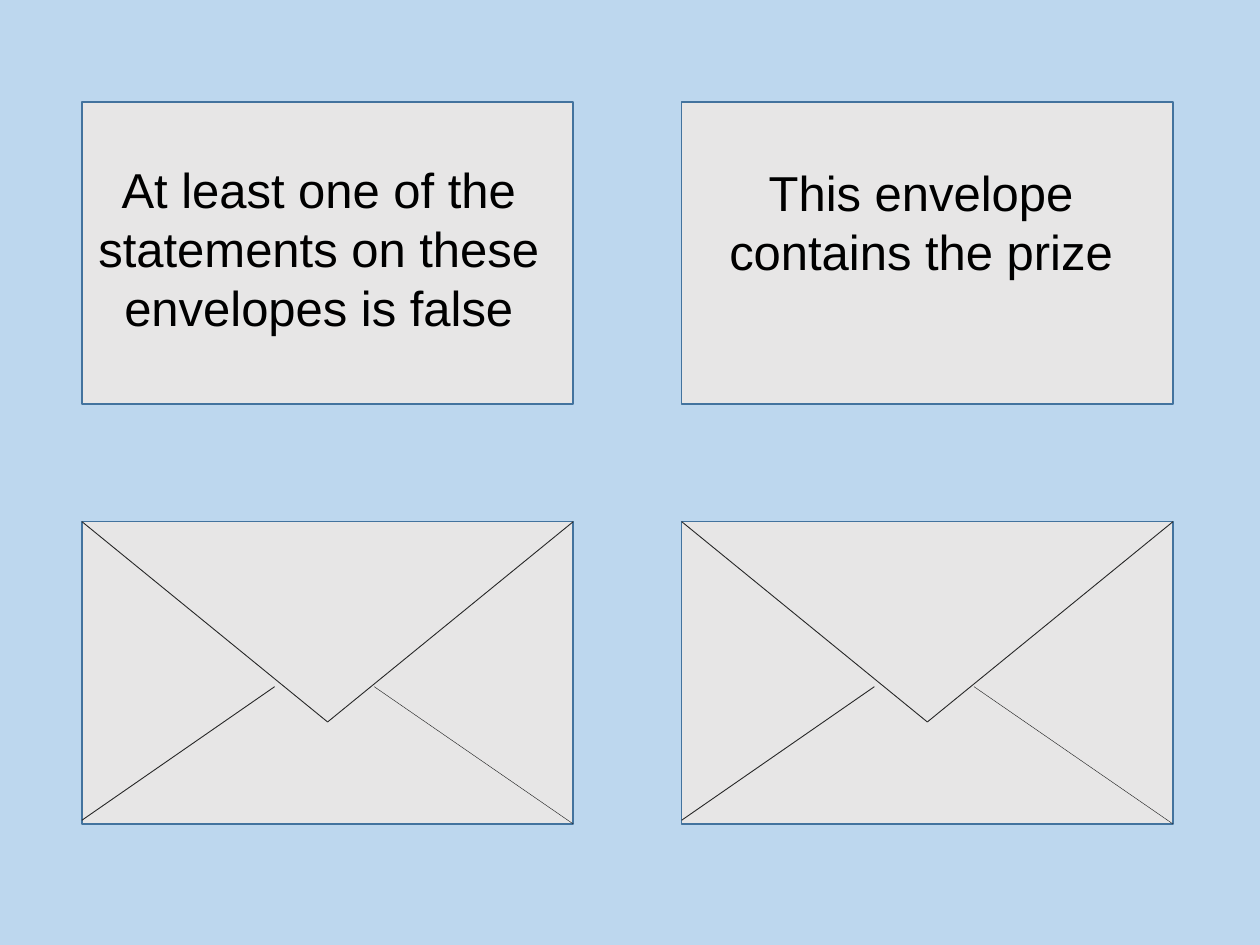
from dataclasses import dataclass

from lxml.etree import SubElement
from pptx import Presentation
from pptx.dml.color import RGBColor
from pptx.enum.shapes import MSO_CONNECTOR as Connector, MSO_SHAPE as Preset
from pptx.enum.text import MSO_AUTO_SIZE as AutoSize, PP_ALIGN as Align
from pptx.oxml.ns import qn
from pptx.util import Inches, Pt


@dataclass(frozen=True)
class Theme:
    background: str = "BDD7EE"
    paper: str = "E7E6E6"
    border: str = "43739E"
    fold: str = "262626"
    text: str = "000000"
    font: str = "Arial"
    text_size: float = 28
    border_width: float = 1


THEME = Theme()
STATEMENTS = [
    ("At least one of the statements on these envelopes is false", (0.65, 1.22, 3.76, 1.51)),
    ("This envelope contains the prize", (5.43, 1.24, 3.76, 1.04)),
]
COLUMNS = (0.65, 5.41)
FRONT_TOP, BACK_TOP = 0.81, 4.14
WIDTH, HEIGHT = 3.9, 2.4
FOLDS = [
    ((0, 0), (WIDTH / 2, 1.59), 0.5),
    ((WIDTH, 0), (WIDTH / 2, 1.59), 0.5),
    ((2.32, 1.31), (WIDTH, HEIGHT), 0.25),
    ((0, 2.37), (1.53, 1.31), 0.5),
]


def color(value):
    return RGBColor.from_string(value)


def add_paper(shapes, left, top):
    shape = shapes.add_shape(
        Preset.RECTANGLE, Inches(left), Inches(top), Inches(WIDTH), Inches(HEIGHT)
    )
    shape.shadow.inherit = False
    shape.fill.solid()
    shape.fill.fore_color.rgb = color(THEME.paper)
    shape.line.color.rgb = color(THEME.border)
    shape.line.width = Pt(THEME.border_width)


def add_fold(shapes, left, top, start, end, width):
    points = [Inches(base + offset) for point in (start, end)
              for base, offset in zip((left, top), point)]
    connector = shapes.add_connector(Connector.STRAIGHT, *points)
    connector.line.color.rgb = color(THEME.fold)
    connector.line.width = Pt(width)
    SubElement(connector._element.spPr, qn("a:effectLst"))


def add_envelope_back(slide, left):
    group = slide.shapes.add_group_shape()
    add_paper(group.shapes, left, BACK_TOP)
    for start, end, width in FOLDS:
        add_fold(group.shapes, left, BACK_TOP, start, end, width)


def add_statement(slide, text, box):
    frame = slide.shapes.add_textbox(*map(Inches, box)).text_frame
    frame.word_wrap = True
    frame.auto_size = AutoSize.SHAPE_TO_FIT_TEXT
    paragraph = frame.paragraphs[0]
    paragraph.alignment = Align.CENTER
    run = paragraph.add_run()
    run.text = text
    run.font.name = THEME.font
    run.font.size = Pt(THEME.text_size)
    run.font.color.rgb = color(THEME.text)


def main():
    """Build the slide with the fronts and backs of two puzzle envelopes."""
    presentation = Presentation()
    presentation.slide_width, presentation.slide_height = Inches(10), Inches(7.5)
    slide = presentation.slides.add_slide(presentation.slide_layouts[6])
    slide.background.fill.solid()
    slide.background.fill.fore_color.rgb = color(THEME.background)
    for left in COLUMNS:
        add_paper(slide.shapes, left, FRONT_TOP)
    for left in COLUMNS:
        add_envelope_back(slide, left)
    for text, box in STATEMENTS:
        add_statement(slide, text, box)
    presentation.save("out.pptx")


if __name__ == "__main__":
    main()
